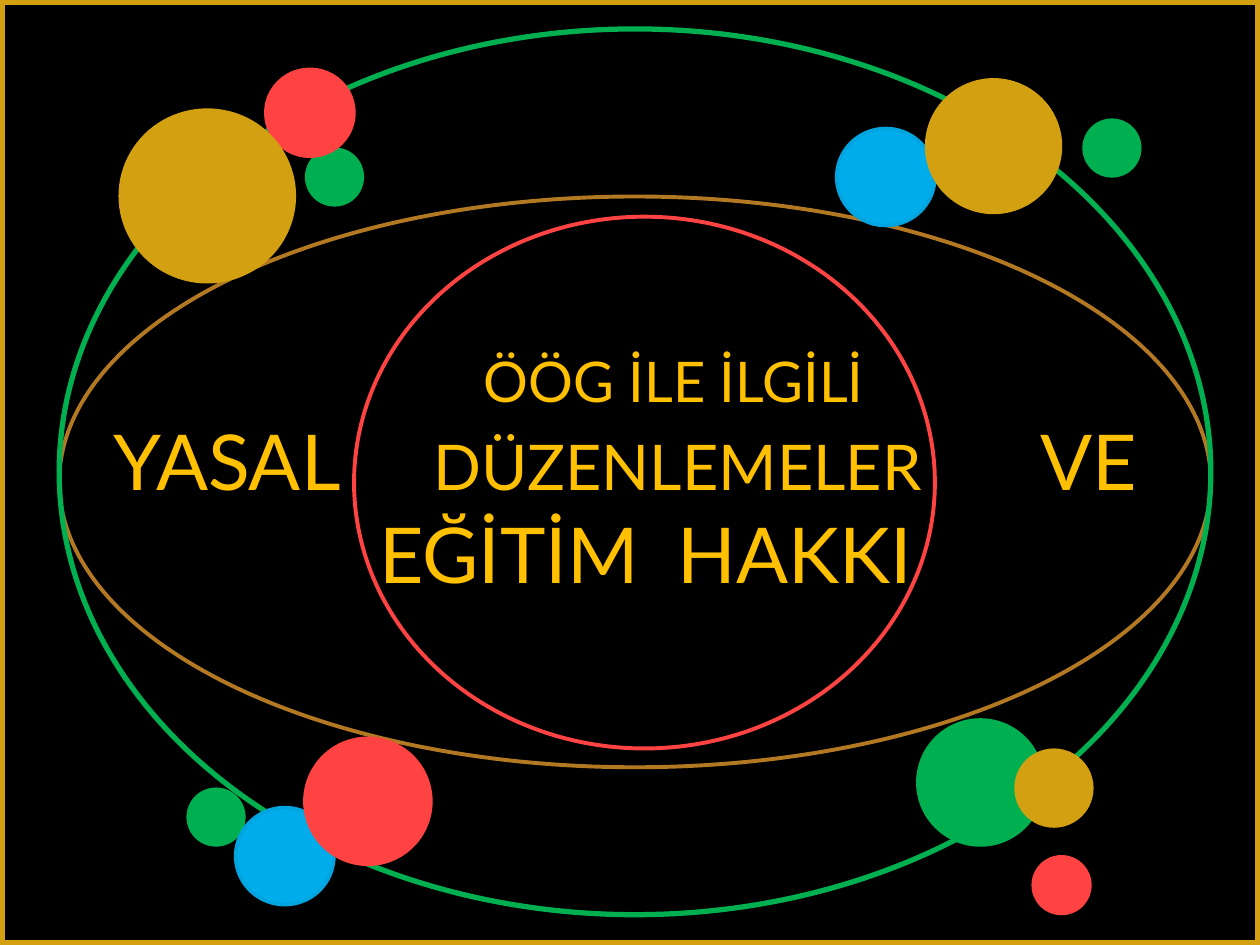
from lxml import etree
from pptx import Presentation
from pptx import util as u
from pptx.dml.color import RGBColor
from pptx.enum import shapes, text
from pptx.oxml import ns

BLACK = RGBColor(0x00, 0x00, 0x00)
GOLD = RGBColor(0xD2, 0xA0, 0x10)
AMBER = RGBColor(0xFF, 0xC0, 0x00)
BROWN = RGBColor(0xB2, 0x78, 0x22)
GREEN = RGBColor(0x00, 0xB0, 0x50)
RED = RGBColor(0xFF, 0x43, 0x43)
BLUE = RGBColor(0x00, 0xAD, 0xEA)
BLUE_EDGE = RGBColor(0x00, 0xA4, 0xDE)
EDGES = {RED: RED, BLUE: BLUE_EDGE}

TITLE_LINES = [
    [("ÖÖG İLE İLGİLİ", 32, 3.74)],
    [("YASAL", 44, 0.8), ("DÜZENLEMELER", 36, 3.34), ("VE", 44, 8.16)],
    [("EĞİTİM", 44, 2.91), ("HAKKI", 44, 5.28)],
]
ORBITS = [
    ((0.47, 1.56, 9.14, 4.53), BROWN, 2.25),
    ((0.47, 0.23, 9.14, 7.03), GREEN, 3),
    ((2.81, 1.72, 4.61, 4.22), RED, 2.25),
]
CLUSTERS = [
    ((0.94, 0.55), [(1.48, 0.62, 0.47, 0.47, GREEN),
                    (1.17, 0, 0.7, 0.69, RED),
                    (0, 0.31, 1.41, 1.39, GOLD)]),
    ((6.64, 0.62), [(0, 0.4, 0.78, 0.77, BLUE),
                    (1.95, 0.32, 0.47, 0.47, GREEN),
                    (0.7, 0, 1.09, 1.08, GOLD)]),
    ((1.48, 5.86), [(0, 0.39, 0.47, 0.47, GREEN),
                    (0.39, 0.55, 0.78, 0.77, BLUE),
                    (0.94, 0, 1, 1, RED)]),
    ((7.27, 5.7), [(0, 0, 1.02, 1.02, GREEN),
                   (0.93, 1.1, 0.45, 0.45, RED),
                   (0.78, 0.24, 0.63, 0.63, GOLD)]),
]


def set_tab_stops(paragraph, stops):
    tab_list = etree.SubElement(paragraph._p.get_or_add_pPr(), ns.qn("a:tabLst"))
    for stop in stops:
        etree.SubElement(tab_list, ns.qn("a:tab"), pos=str(u.Inches(stop)), algn="l")


def fill_title(title, box):
    title.left, title.top, title.width, title.height = map(u.Inches, box)
    title.fill.solid()
    title.fill.fore_color.rgb = BLACK
    title.line.color.rgb = GOLD
    title.line.width = u.Pt(6)
    frame = title.text_frame
    frame.auto_size = text.MSO_AUTO_SIZE.NONE
    frame.vertical_anchor = text.MSO_ANCHOR.MIDDLE
    for index, words in enumerate(TITLE_LINES):
        paragraph = frame.add_paragraph() if index else frame.paragraphs[0]
        paragraph.alignment = text.PP_ALIGN.LEFT
        set_tab_stops(paragraph, [stop for _, _, stop in words])
        for word, size, _ in words:
            run = paragraph.add_run()
            run.text = "\t" + word
            run.font.name = "Lato"
            run.font.size = u.Pt(size)
            run.font.color.rgb = AMBER


def add_ellipse(slide, box, fill=None, line=None, width=2):
    ellipse = slide.shapes.add_shape(shapes.MSO_SHAPE.OVAL, *map(u.Inches, box))
    ellipse.shadow.inherit = False
    if fill is None:
        ellipse.fill.background()
    else:
        ellipse.fill.solid()
        ellipse.fill.fore_color.rgb = fill
    if line is None:
        ellipse.line.fill.background()
    else:
        ellipse.line.color.rgb = line
        ellipse.line.width = u.Pt(width)


def add_cluster(slide, origin, dots):
    left, top = origin
    for x, y, width, height, color in dots:
        add_ellipse(slide, (left + x, top + y, width, height), color, EDGES.get(color))


def main():
    presentation = Presentation()
    presentation.slide_width = u.Inches(10)
    presentation.slide_height = u.Inches(7.5)
    slide = presentation.slides.add_slide(presentation.slide_layouts[5])
    fill_title(slide.shapes.title, (0, 0, 10, 7.5))
    for box, color, width in ORBITS:
        add_ellipse(slide, box, line=color, width=width)
    for origin, dots in CLUSTERS:
        add_cluster(slide, origin, dots)
    presentation.save("out.pptx")


if __name__ == "__main__":
    main()
